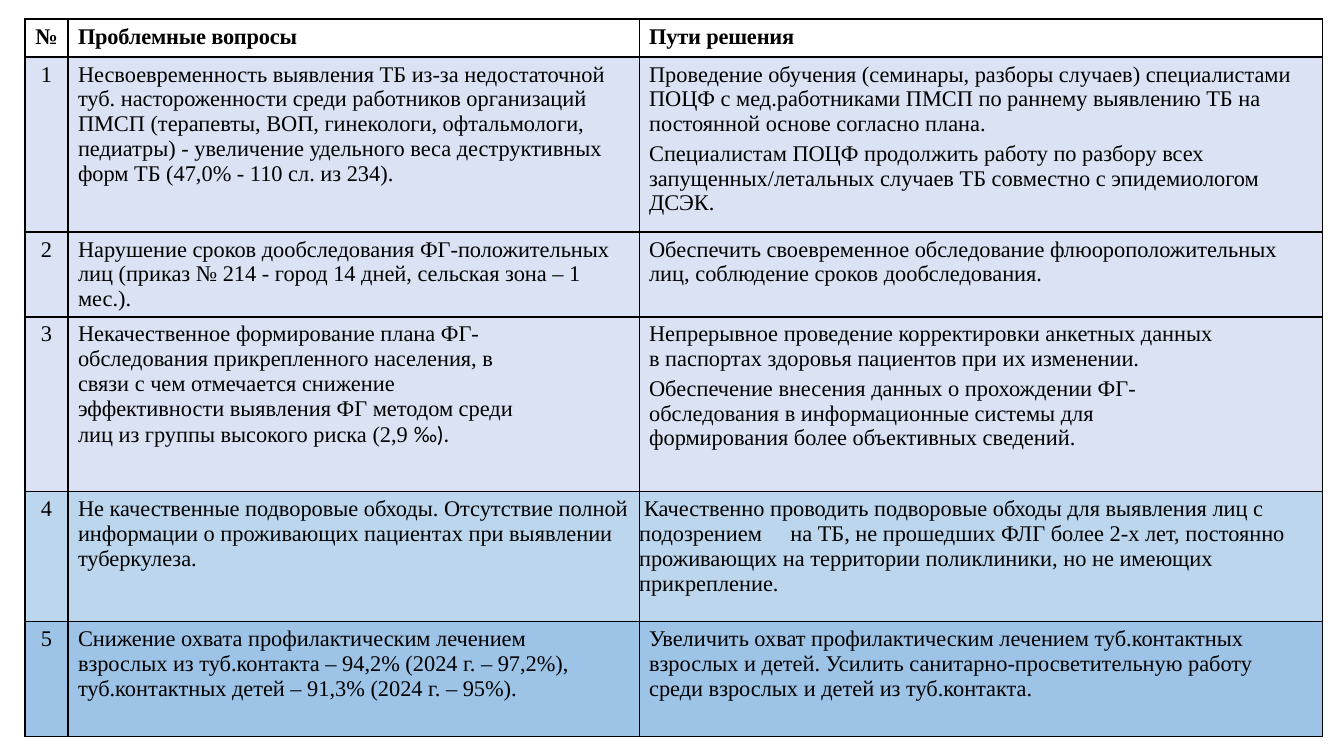
from lxml import etree
from pptx import Presentation, util as u
from pptx.dml.color import RGBColor
from pptx.enum import text
from pptx.oxml import ns

HEAD = ["№", "Проблемные вопросы", "Пути решения"]
ROWS = [
    {"high": 175, "fill": "pale", "ends": (19, 20),
     "issue": ["Несвоевременность выявления ТБ из-за недостаточной туб. настороженности среди работников организаций ПМСП (терапевты, ВОП, гинекологи, офтальмологи, педиатры) - увеличение удельного веса деструктивных форм ТБ (47,0% - 110 сл. из 234)."],
     "plan": ["Проведение обучения (семинары, разборы случаев) специалистами ПОЦФ с мед.работниками ПМСП по раннему выявлению ТБ на постоянной основе согласно плана.",
              "Специалистам ПОЦФ продолжить работу по разбору всех запущенных/летальных случаев ТБ совместно с эпидемиологом ДСЭК."]},
    {"high": 85, "fill": "pale", "ends": (19, 42),
     "issue": ["Нарушение сроков дообследования ФГ-положительных лиц (приказ № 214 - город 14 дней, сельская зона – 1 мес.)."],
     "plan": ["Обеспечить своевременное обследование флюороположительных лиц, соблюдение сроков дообследования."]},
    {"high": 175, "fill": "pale", "ends": (119, 104),
     "issue": ["Некачественное формирование плана ФГ-обследования прикрепленного населения, в связи с чем отмечается снижение эффективности выявления ФГ методом среди лиц из группы высокого риска (2,9 ‰)."],
     "plan": ["Непрерывное проведение корректировки анкетных данных в паспортах здоровья пациентов при их изменении.",
              "Обеспечение внесения данных о прохождении ФГ-обследования в информационные системы для формирования более объективных сведений."]},
    {"high": 130, "fill": "mid", "ends": (4, 4), "tab": 150,
     "issue": ["Не качественные подворовые обходы. Отсутствие полной информации о проживающих пациентах при выявлении туберкулеза."],
     "plan": ["Качественно проводить подворовые обходы для выявления лиц с подозрением\tна ТБ, не прошедших ФЛГ более 2-х лет, постоянно проживающих на территории поликлиники, но не имеющих прикрепление."]},
    {"high": 115, "fill": "deep", "ends": (39, 42),
     "issue": ["Снижение охвата профилактическим лечением взрослых из туб.контакта – 94,2% (2024 г. – 97,2%), туб.контактных детей – 91,3% (2024 г. – 95%)."],
     "plan": ["Увеличить охват профилактическим лечением туб.контактных взрослых и детей. Усилить санитарно-просветительную работу среди взрослых и детей из туб.контакта."]},
]
THEME = {"ink": "000000", "pale": "DAE2F3", "mid": "BCD6ED", "deep": "9DC3E6",
         "font": "Times New Roman", "sign": "Calibri",
         "size": u.Pt(16), "gap": u.Pt(3.2), "line": u.Pt(1)}
LEFT, TOP, HEADH = 25, 19, 38
COLS = [43, 571, 683]
PAD = 10


def px(n):
    return round(n * 914400 / 100.8)


def apply(item, form):
    for key, val in form.items():
        setattr(item, key, val)


def add(node, tag, **atts):
    return etree.SubElement(node, ns.qn(tag), {k: str(v) for k, v in atts.items()})


def border(cell):
    props = cell._tc.get_or_add_tcPr()
    for i, tag in enumerate(("a:lnL", "a:lnR", "a:lnT", "a:lnB")):
        line = add(props, tag, w=THEME["line"])
        add(add(line, "a:solidFill"), "a:srgbClr", val=THEME["ink"])
        props.insert(i, line)


def write(para, words, bold, track):
    main, sign, tail = words.partition("‰")
    for part, font in ((main, THEME["font"]), (sign + tail, THEME["sign"])):
        if part:
            run = para.add_run()
            run.text = part
            apply(run.font, {"name": font, "size": THEME["size"], "bold": bold})
            run.font.color.rgb = RGBColor.from_string(THEME["ink"])
            if track:
                run.font._element.set("spc", str(track))


def fill(cell, paras, tone=None, mid=False, end=0, tab=0, bold=False, track=0):
    apply(cell, {"margin_left": 0, "margin_right": 0, "margin_top": u.Inches(0.05),
                 "margin_bottom": 0, "vertical_anchor": text.MSO_ANCHOR.TOP})
    if tone:
        cell.fill.solid()
        cell.fill.fore_color.rgb = RGBColor.from_string(THEME[tone])
    else:
        cell.fill.background()
    border(cell)
    frame = cell.text_frame
    for i, words in enumerate(paras):
        para = frame.add_paragraph() if i else frame.paragraphs[0]
        props = para._p.get_or_add_pPr()
        if mid:
            para.alignment = text.PP_ALIGN.CENTER
        else:
            props.set("marL", str(0 if tab else px(PAD)))
            props.set("marR", str(px(end)))
        if tab:
            props.set("indent", str(px(PAD // 2)))
            add(add(props, "a:tabLst"), "a:tab", pos=px(tab), algn="l")
        if i:
            para.space_before = THEME["gap"]
        write(para, words, bold, track)


def main():
    deck = Presentation()
    apply(deck, {"slide_width": u.Inches(13.33), "slide_height": u.Inches(7.5)})
    slide = deck.slides.add_slide(deck.slide_layouts[6])
    highs = [HEADH] + [row["high"] for row in ROWS]
    table = slide.shapes.add_table(len(highs), len(COLS), px(LEFT), px(TOP),
                                   px(sum(COLS)), px(sum(highs))).table
    apply(table, {"first_row": False, "horz_banding": False})
    for col, wide in zip(table.columns, COLS):
        col.width = px(wide)
    for row, high in zip(table.rows, highs):
        row.height = px(high)
    for c, words in enumerate(HEAD):
        fill(table.cell(0, c), [words], mid=c == 0, bold=True, track=-10 if c else -50)
    for r, row in enumerate(ROWS, 1):
        tone, ends = row["fill"], row["ends"]
        fill(table.cell(r, 0), [str(r)], tone, mid=True, track=-20)
        fill(table.cell(r, 1), row["issue"], tone, end=ends[0])
        fill(table.cell(r, 2), row["plan"], tone, end=ends[1], tab=row.get("tab", 0))
    deck.save("out.pptx")


if __name__ == "__main__":
    main()
